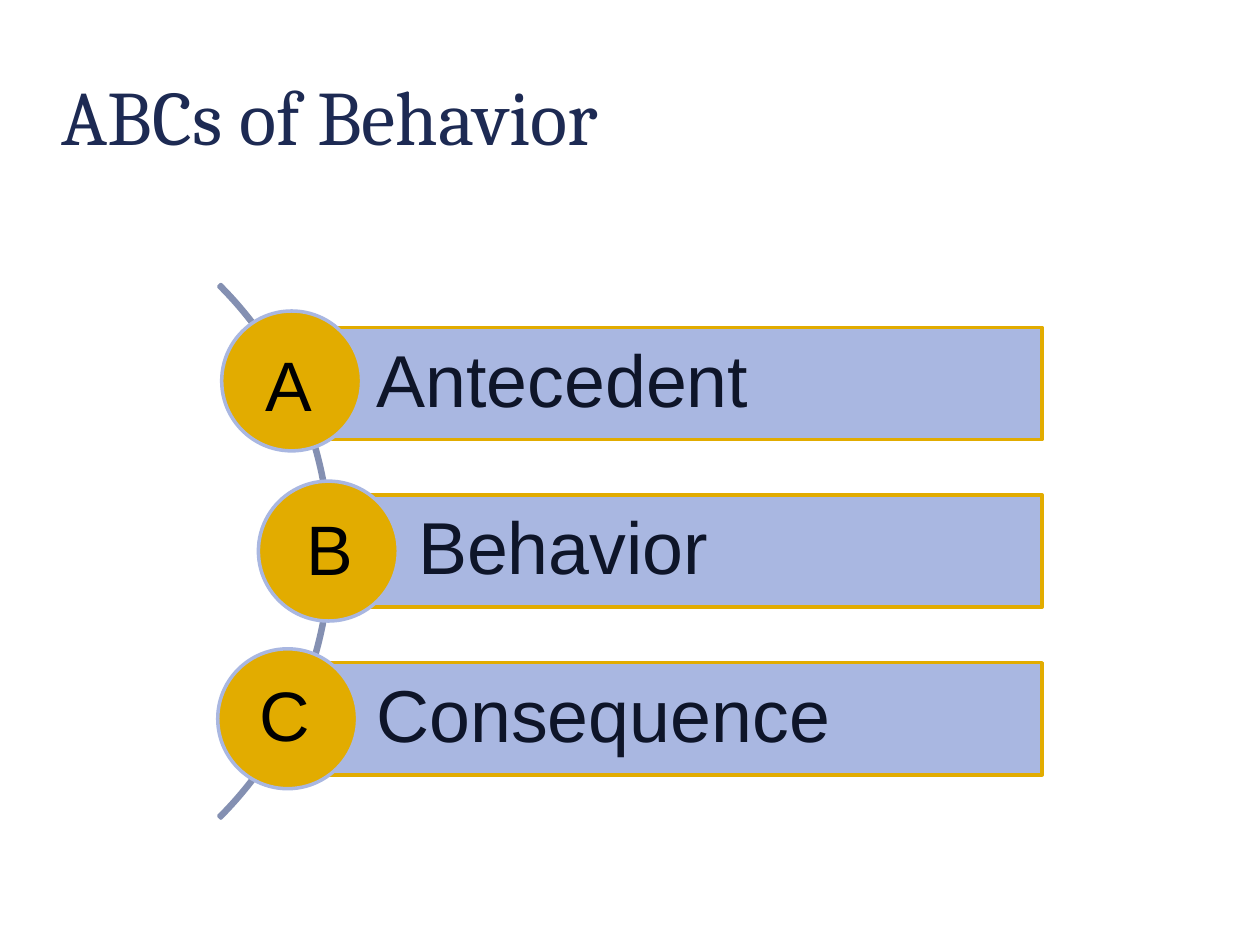
from dataclasses import dataclass

from pptx import Presentation
from pptx.dml.color import RGBColor
from pptx.enum.shapes import MSO_SHAPE
from pptx.enum.text import MSO_ANCHOR, PP_ALIGN
from pptx.shapes.autoshape import Shape
from pptx.slide import Slide
from pptx.util import Cm, Pt


@dataclass(frozen=True)
class Theme:
    navy: RGBColor = RGBColor(0x1D, 0x2A, 0x53)
    ink: RGBColor = RGBColor(0x0E, 0x15, 0x29)
    black: RGBColor = RGBColor(0, 0, 0)
    gold: RGBColor = RGBColor(0xE2, 0xAC, 0x00)
    periwinkle: RGBColor = RGBColor(0xA9, 0xB7, 0xE1)
    slate: RGBColor = RGBColor(0x84, 0x90, 0xB2)
    heading_font: str = "Cambria"
    body_font: str = "Arial"
    title_size: int = 44
    term_size: int = 42
    letter_size: int = 40
    line_width: int = 2


@dataclass(frozen=True)
class Step:
    """One stage of the model; positions are in centimetres."""
    letter: str
    term: str
    bar_left: float
    circle: tuple[float, float]
    letter_at: tuple[float, float]


THEME = Theme()
STEPS = [
    Step("A", "Antecedent", 5.79, (4.47, 6.27), (5.11, 6.76)),
    Step("B", "Behavior", 6.63, (5.21, 9.7), (5.92, 10.06)),
    Step("C", "Consequence", 5.79, (4.39, 13.08), (4.98, 13.41)),
]
BAR_TOP, BAR_PITCH, BAR_HEIGHT, BAR_RIGHT = 6.6, 3.38, 2.26, 21.01
CIRCLE_SIZE = 2.82
LETTER_WIDTH, LETTER_HEIGHT = 1.6, 1.96


def write(shape: Shape, text: str, font_name: str, size: int, color: RGBColor,
          anchor: MSO_ANCHOR) -> None:
    frame = shape.text_frame
    frame.word_wrap = True
    frame.vertical_anchor = anchor
    paragraph = frame.paragraphs[0]
    paragraph.text = text
    paragraph.alignment = PP_ALIGN.LEFT
    paragraph.font.name = font_name
    paragraph.font.size = Pt(size)
    paragraph.font.color.rgb = color


def add_outlined(slide: Slide, kind: MSO_SHAPE, left: float, top: float,
                 width: float, height: float, line: RGBColor,
                 fill: RGBColor | None = None) -> Shape:
    shape = slide.shapes.add_shape(kind, Cm(left), Cm(top), Cm(width), Cm(height))
    shape.shadow.inherit = False
    if fill is None:
        shape.fill.background()
    else:
        shape.fill.solid()
        shape.fill.fore_color.rgb = fill
    shape.line.color.rgb = line
    shape.line.width = Pt(THEME.line_width)
    return shape


def add_title(slide: Slide, text: str) -> None:
    title = slide.shapes.add_textbox(Cm(0.99), Cm(1.04), Cm(19.41), Cm(2.54))
    write(title, text, THEME.heading_font, THEME.title_size, THEME.navy,
          MSO_ANCHOR.MIDDLE)


def add_arc(slide: Slide) -> None:
    """Draw the thin curve that links the circles."""
    arc = add_outlined(slide, MSO_SHAPE.BLOCK_ARC, -8.53, 3.51, 15.21, 15.21,
                       THEME.slate)
    for index, value in enumerate((189, 27, 0.004)):
        arc.adjustments[index] = value


def add_step(slide: Slide, step: Step, top: float) -> None:
    bar = add_outlined(slide, MSO_SHAPE.RECTANGLE, step.bar_left, top,
                       BAR_RIGHT - step.bar_left, BAR_HEIGHT, THEME.gold,
                       THEME.periwinkle)
    write(bar, step.term, THEME.body_font, THEME.term_size, THEME.ink,
          MSO_ANCHOR.MIDDLE)
    frame = bar.text_frame
    frame.margin_left = Cm(1.8)
    frame.margin_right = frame.margin_top = frame.margin_bottom = Cm(0.3)
    frame.paragraphs[0].line_spacing = 0.9
    add_outlined(slide, MSO_SHAPE.OVAL, *step.circle, CIRCLE_SIZE, CIRCLE_SIZE,
                 THEME.periwinkle, THEME.gold)


def add_letter(slide: Slide, step: Step) -> None:
    left, top = step.letter_at
    letter = slide.shapes.add_textbox(Cm(left), Cm(top), Cm(LETTER_WIDTH),
                                      Cm(LETTER_HEIGHT))
    write(letter, step.letter, THEME.body_font, THEME.letter_size, THEME.black,
          MSO_ANCHOR.TOP)


def main() -> None:
    presentation = Presentation()
    presentation.slide_width, presentation.slide_height = Cm(25.4), Cm(19.05)
    slide = presentation.slides.add_slide(presentation.slide_layouts[6])
    add_title(slide, "ABCs of Behavior")
    add_arc(slide)
    for row, step in enumerate(STEPS):
        add_step(slide, step, BAR_TOP + row * BAR_PITCH)
    for step in STEPS:
        add_letter(slide, step)
    presentation.save("out.pptx")


if __name__ == "__main__":
    main()
